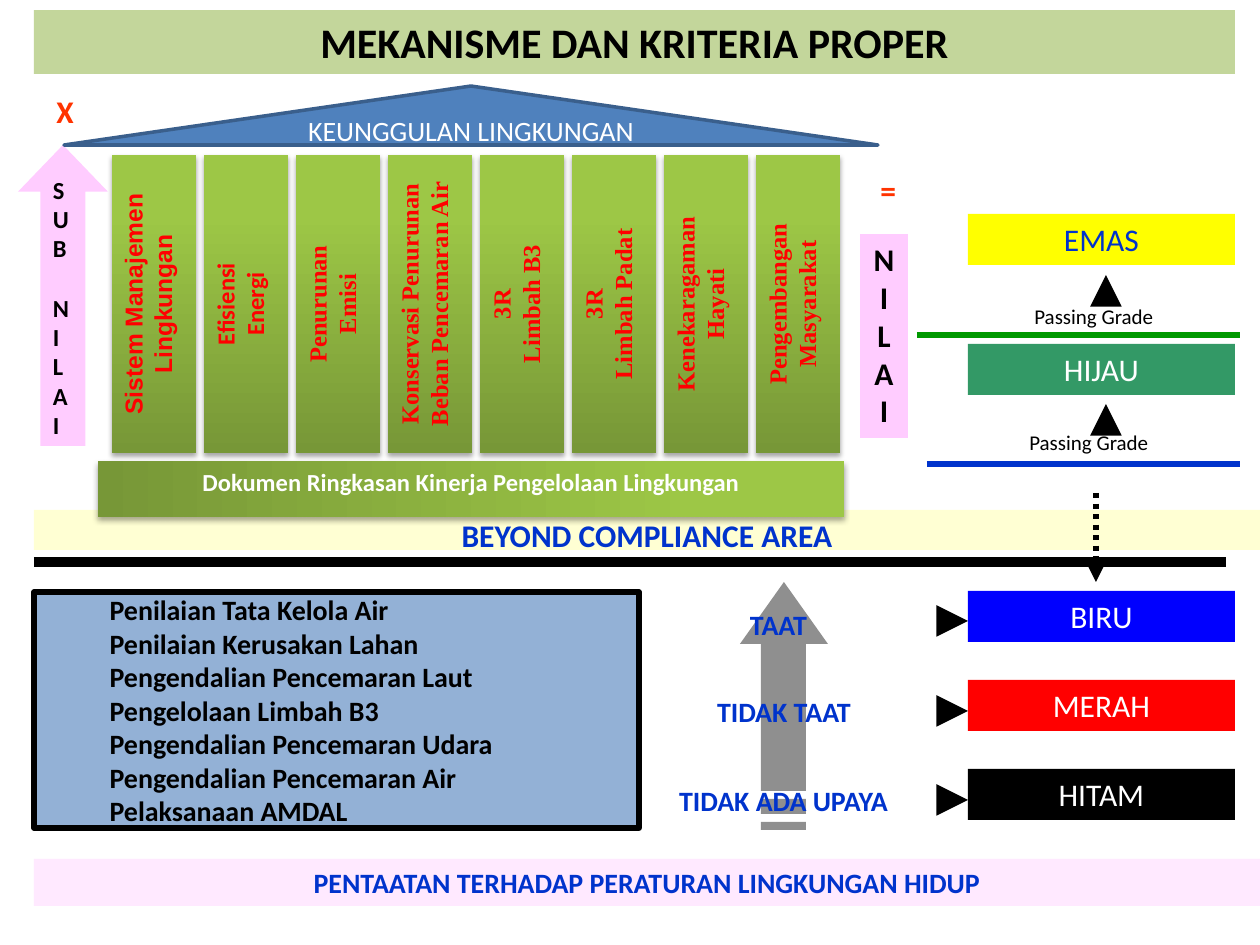
from dataclasses import dataclass

from pptx import Presentation
from pptx import util as u
from pptx.dml.color import RGBColor
from pptx.enum import dml, shapes, text
from pptx.oxml import ns, xmlchemy

EMU_PER_PX = 914400 / 126


@dataclass(frozen=True)
class Theme:
    black: str = "000000"
    white: str = "FFFFFF"
    blue: str = "0033CC"
    red: str = "FF0000"
    accent: str = "FF3300"
    green: str = "009900"
    steel: str = "4F81BD"
    steel_edge: str = "3A5F8C"
    pink: str = "FFCCFF"
    cream: str = "FFFF99"
    banner: str = "C3D69B"
    leaf_dark: str = "779737"
    leaf_light: str = "9DC746"
    font: str = "Calibri"
    title: int = 24
    large: int = 18
    medium: int = 16
    small: int = 14
    note: int = 12


THEME = Theme()
SHAPE = shapes.MSO_SHAPE
LEFT, CENTER = text.PP_ALIGN.LEFT, text.PP_ALIGN.CENTER


def px(value):
    return round(value * EMU_PER_PX)


def rgb(value):
    return RGBColor.from_string(value)


def add_xml(parent, tag, **attributes):
    child = xmlchemy.OxmlElement(tag)
    for name, value in attributes.items():
        child.set(name, str(value))
    parent.append(child)
    return child


def place(box, left, top, width, height):
    box.left, box.top, box.width, box.height = map(px, (left, top, width, height))


def paint(box, color, opacity=100):
    box.fill.solid()
    box.fill.fore_color.rgb = rgb(color)
    if opacity < 100:
        color_node = box._element.spPr.find(".//" + ns.qn("a:srgbClr"))
        add_xml(color_node, "a:alpha", val=opacity * 1000)


def outline(box, color, points):
    box.line.color.rgb = rgb(color)
    box.line.width = u.Pt(points)


def write(box, lines, size, color, bold=False, font=THEME.font, align=CENTER,
          anchor=text.MSO_ANCHOR.TOP, indent=0, gap=0):
    frame = box.text_frame
    frame.word_wrap = True
    frame.auto_size = text.MSO_AUTO_SIZE.NONE
    frame.vertical_anchor = anchor
    for index, line in enumerate(lines):
        para = frame.paragraphs[0] if index == 0 else frame.add_paragraph()
        para.alignment = align
        para.space_before = u.Pt(gap if index else 0)
        if indent:
            properties = para._p.get_or_add_pPr()
            properties.set("marL", str(px(indent)))
            properties.set("indent", "0")
            add_xml(properties, "a:buNone")
        span = para.add_run()
        span.text = line
        span.font.name = font
        span.font.size = u.Pt(size)
        span.font.bold = bold
        span.font.color.rgb = rgb(color)


def add_panel(slide, kind, area, color=None, opacity=100):
    box = slide.shapes.add_shape(kind, *map(px, area))
    box.shadow.inherit = False
    box.line.fill.background()
    if color:
        paint(box, color, opacity)
    return box


def add_label(slide, area, line, size, color, bold=True, align=CENTER):
    box = slide.shapes.add_textbox(*map(px, area))
    write(box, [line], size, color, bold, align=align)


def add_leaf_panel(slide, area, angle):
    box = add_panel(slide, SHAPE.RECTANGLE, area)
    box.fill.gradient()
    box.fill.gradient_angle = angle
    for stop, position, color in zip(box.fill.gradient_stops, (0, 0.8),
                                     (THEME.leaf_dark, THEME.leaf_light)):
        stop.position = position
        stop.color.rgb = rgb(color)
    effects = box._element.spPr.find(ns.qn("a:effectLst"))
    shadow = add_xml(effects, "a:outerShdw", blurRad=u.Pt(3.1), dist=u.Pt(1.8),
                     dir=5400000, rotWithShape=0)
    add_xml(add_xml(shadow, "a:srgbClr", val=THEME.black), "a:alpha", val=35000)
    return box


def add_line(slide, ends, color, points, arrow=False, dash=None):
    line = slide.shapes.add_connector(shapes.MSO_CONNECTOR.STRAIGHT, *map(px, ends))
    outline(line, color, points)
    if dash:
        line.line.dash_style = dash
    properties = line._element.spPr
    if arrow:
        add_xml(properties.find(ns.qn("a:ln")), "a:tailEnd", type="triangle")
    add_xml(properties, "a:effectLst")


def add_striped_arrow(slide):
    head = [(740, 644), (761, 644), (761, 791), (806, 791), (806, 644), (828, 644), (784, 582)]
    stripes = [[(761, top), (806, top), (806, bottom), (761, bottom)]
               for top, bottom in ((799, 814), (822, 830))]
    builder = slide.shapes.build_freeform(*head[0], scale=EMU_PER_PX)
    builder.add_line_segments(head[1:])
    for stripe in stripes:
        builder.move_to(*stripe[0])
        builder.add_line_segments(stripe[1:])
    arrow = builder.convert_to_shape()
    arrow.shadow.inherit = False
    arrow.line.fill.background()
    paint(arrow, THEME.black, 44)


def add_title_and_list(slide):
    title, body = slide.placeholders
    place(title, 34, 10, 1201, 64)
    paint(title, THEME.banner)
    write(title, ["MEKANISME DAN KRITERIA PROPER"], THEME.title, THEME.black, True)

    place(body, 34, 592, 605, 236)
    paint(body, THEME.steel, 61)
    outline(body, THEME.black, 3)
    body.text_frame.margin_top = body.text_frame.margin_bottom = 0
    write(body, ["Penilaian Tata Kelola Air", "Penilaian Kerusakan Lahan",
                 "Pengendalian Pencemaran Laut", "Pengelolaan Limbah B3",
                 "Pengendalian Pencemaran Udara", "Pengendalian Pencemaran Air",
                 "Pelaksanaan AMDAL"],
          THEME.medium, THEME.black, True, align=LEFT,
          anchor=text.MSO_ANCHOR.MIDDLE, indent=63)


def add_bands(slide):
    for top, height, color, line, size in (
            (510, 40, THEME.cream, "BEYOND COMPLIANCE AREA", THEME.large),
            (859, 47, THEME.pink, "PENTAATAN TERHADAP PERATURAN LINGKUNGAN HIDUP", THEME.medium)):
        band = add_panel(slide, SHAPE.RECTANGLE, (34, top, 1226, height), color, 43)
        write(band, [line], size, THEME.blue, True)
    add_line(slide, (34, 562, 1226, 562), THEME.black, 6)


def add_ratings(slide):
    for top, line, fill, color in (
            (214, "EMAS", "FFFF00", THEME.blue), (344, "HIJAU", "339966", THEME.white),
            (591, "BIRU", "0000FF", THEME.white), (680, "MERAH", THEME.red, THEME.white),
            (769, "HITAM", THEME.black, THEME.white)):
        box = add_panel(slide, SHAPE.RECTANGLE, (968, top, 267, 51), fill)
        write(box, [line], THEME.large, color)
    for y in (621, 711, 800):
        add_line(slide, (937, y, 968, y), THEME.black, 6, arrow=True)
    for left, y, color, label in ((917, 335, THEME.green, (1022, 297)),
                                  (927, 464, THEME.blue, (1017, 423))):
        add_line(slide, (left, y, 1240, y), color, 3)
        add_line(slide, (1106, y - 41, 1106, y - 60), THEME.black, 6, arrow=True)
        add_label(slide, (*label, 164, 38), "Passing Grade", THEME.note, THEME.black, False, LEFT)
    add_line(slide, (1096, 493, 1096, 582), THEME.black, 3, True, dml.MSO_LINE.ROUND_DOT)


def add_compliance_scale(slide):
    add_striped_arrow(slide)
    for area, line in (((640, 777, 287, 47), "TIDAK ADA UPAYA"),
                       ((660, 688, 248, 47), "TIDAK TAAT"),
                       ((650, 601, 257, 47), "TAAT")):
        add_label(slide, area, line, THEME.medium, THEME.blue)


def add_scores(slide):
    arrow = add_panel(slide, SHAPE.UP_ARROW, (18, 145, 90, 301), THEME.pink)
    arrow.adjustments[1] = 0.52
    write(arrow, ["SUB", "N I L A I"], THEME.small, THEME.black, True, align=LEFT, gap=17)
    total = add_panel(slide, SHAPE.FLOWCHART_PROCESS, (860, 234, 48, 204), THEME.pink)
    write(total, ["NI L A I"], THEME.large, THEME.black, True)
    add_label(slide, (44, 86, 59, 50), "X", THEME.large, THEME.accent, align=LEFT)
    add_label(slide, (868, 165, 59, 50), "=", THEME.large, THEME.accent, align=LEFT)


def add_temple(slide):
    serif = "Times New Roman"
    columns = (
        (["Sistem Manajemen Lingkungan"], "Arial"), (["Efisiensi", "Energi"], THEME.font),
        (["Penurunan", "Emisi"], serif), (["Konservasi Penurunan Beban Pencemaran Air"], serif),
        (["3R", "Limbah B3"], serif), (["3R", "Limbah Padat"], serif),
        (["Kenekaragaman", "Hayati"], serif), (["Pengembangan Masyarakat"], serif))
    for index, (lines, font) in enumerate(columns):
        column = add_leaf_panel(slide, (112 + 92 * index, 155, 84, 298), 90)
        column.text_frame._txBody.bodyPr.set("vert", "vert270")
        write(column, lines, THEME.small, THEME.red, True, font)
    roof = add_panel(slide, SHAPE.ISOSCELES_TRIANGLE, (64, 86, 814, 59), THEME.steel)
    outline(roof, THEME.steel_edge, 2)
    write(roof, ["KEUNGGULAN LINGKUNGAN"], THEME.medium, THEME.white,
          anchor=text.MSO_ANCHOR.MIDDLE)
    base = add_leaf_panel(slide, (98, 461, 746, 56), 0)
    write(base, ["Dokumen Ringkasan Kinerja Pengelolaan Lingkungan"],
          THEME.small, THEME.white, True)


def main():
    deck = Presentation()
    deck.slide_width, deck.slide_height = u.Inches(10), u.Inches(7.5)
    slide = deck.slides.add_slide(deck.slide_layouts[1])
    add_title_and_list(slide)
    add_bands(slide)
    add_compliance_scale(slide)
    add_ratings(slide)
    add_scores(slide)
    add_temple(slide)
    deck.save("out.pptx")


if __name__ == "__main__":
    main()
